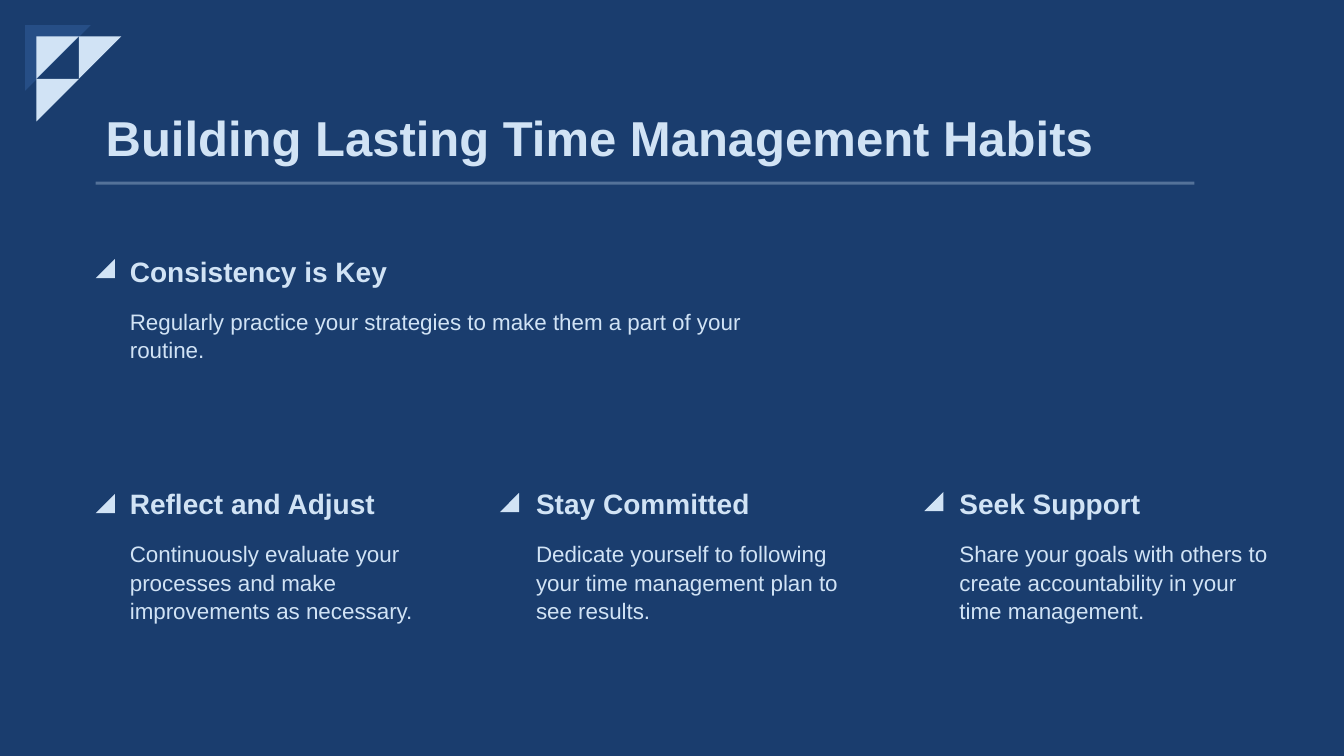
from pptx import Presentation, util as u
from pptx.dml.color import RGBColor
from pptx.enum import shapes, text
from pptx.oxml import parse_xml
from pptx.oxml.ns import nsdecls

COLS, ROWS = 160, 90
NAVY, BLUE, PALE = "1A3D6E", "264E86", "D1E3F5"


def rgb(value):
    return RGBColor.from_string(value)


class Deck:
    """Holds the style and the current slide; lengths are grid columns and rows."""

    font = "Arial"

    def __init__(self):
        self.prs = Presentation()
        self.prs.slide_width, self.prs.slide_height = u.Inches(13.33), u.Inches(7.5)
        self.col = self.prs.slide_width / COLS
        self.row = self.prs.slide_height / ROWS

    def new_slide(self, background):
        self.s = self.prs.slides.add_slide(self.prs.slide_layouts[6])
        self.s.background.fill.solid()
        self.s.background.fill.fore_color.rgb = rgb(background)

    def place(self, x, y, w, h):
        return [round(v) for v in (x * self.col, y * self.row, w * self.col, h * self.row)]

    def paint(self, sp, color):
        sp.shadow.inherit = False
        sp.fill.solid()
        sp.fill.fore_color.rgb = rgb(color)
        sp.line.fill.background()

    def bar(self, x, y, w, h, color, opacity):
        sp = self.s.shapes.add_shape(shapes.MSO_SHAPE.RECTANGLE, *self.place(x, y, w, h))
        self.paint(sp, color)
        tint = sp.fill._xPr.find(".//{*}srgbClr")
        tint.append(parse_xml(f'<a:alpha {nsdecls("a")} val="{opacity * 1000}"/>'))

    def triangle(self, x, y, size, color, corner="top left", parent=None):
        """Draw a right triangle with its right angle in the named corner."""
        left, top, w, h = self.place(x, y, size, size)
        points = [(left, top), (left + w, top), (left, top + h)]
        if corner == "bottom right":
            points = [(2 * left + w - px, 2 * top + h - py) for px, py in points]
        builder = (parent or self.s).shapes.build_freeform(*points[0], scale=1.0)
        builder.add_line_segments(points[1:], close=True)
        self.paint(builder.convert_to_shape(), color)

    def text(self, x, y, w, h, words, size, bold=False, margins=(0.05, 0.05),
             anchor="TOP", grow=True, spacing=None):
        tf = self.s.shapes.add_textbox(*self.place(x, y, w, h)).text_frame
        tf.word_wrap = True
        tf.auto_size = getattr(text.MSO_AUTO_SIZE, "SHAPE_TO_FIT_TEXT" if grow else "NONE")
        tf.vertical_anchor = getattr(text.MSO_ANCHOR, anchor)
        tf.margin_top, tf.margin_bottom = map(u.Inches, margins)
        p = tf.paragraphs[0]
        p.line_spacing = spacing
        r = p.add_run()
        r.text = words
        r.font.name, r.font.size, r.font.bold = self.font, u.Pt(size), bold
        r.font.color.rgb = rgb(PALE)

    def habit(self, x, heading_y, body_y, widths, marker, heading, body):
        self.triangle(*marker, 2.28, PALE, "bottom right")
        self.text(x, heading_y, widths[0], 5.04, heading, 20, bold=True,
                  margins=(0.05, 0), anchor="BOTTOM")
        self.text(x, body_y, widths[1], 90 / 7.5, body, 16, spacing=1.05)

    def ornament(self, x, y, size):
        group = self.s.shapes.add_group_shape()
        self.triangle(3, 3, 7.8, BLUE, parent=group)
        for i, j in ((0, 0), (1, 0), (0, 1)):
            self.triangle(x + i * size, y + j * size, size, PALE, parent=group)


HABITS = [
    (14.28, 29.28, 35.88, (48.48, 78.72), (11.4, 30.84), "Consistency is Key",
     "Regularly practice your strategies to make them a part of your routine."),
    (14.28, 56.88, 63.6, (39.24, 39.24), (11.4, 58.8), "Reflect and Adjust",
     "Continuously evaluate your processes and make improvements as necessary."),
    (62.64, 56.88, 63.6, (39.24, 39.24), (59.52, 58.68), "Stay Committed",
     "Dedicate yourself to following your time management plan to see results."),
    (113.04, 56.88, 63.6, (42.48, 39.24), (110.04, 58.56), "Seek Support",
     "Share your goals with others to create accountability in your time management."),
]


def main():
    deck = Deck()
    deck.new_slide(NAVY)
    deck.bar(11.4, 21.64, 130.8, 0.36, PALE, opacity=32)
    deck.ornament(4.32, 4.32, 5.07)
    deck.text(11.4, 1.8, 130.8, 18.6, "Building Lasting Time Management Habits", 35,
              bold=True, margins=(0, 0.05), anchor="BOTTOM", grow=False)
    for habit in HABITS:
        deck.habit(*habit)
    deck.prs.save("out.pptx")


if __name__ == "__main__":
    main()
